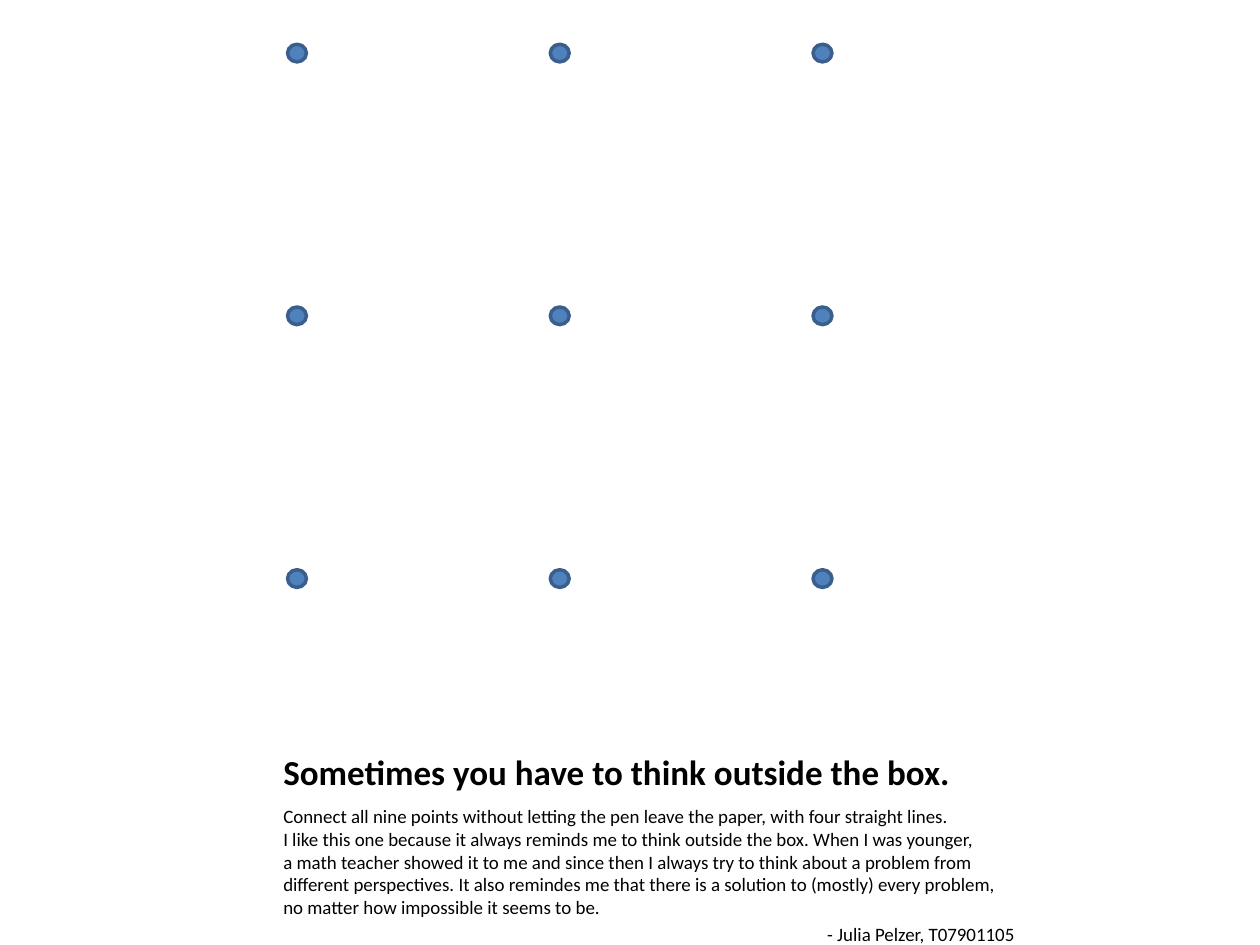
from dataclasses import dataclass

from lxml import etree
from pptx import Presentation
from pptx.dml.color import RGBColor
from pptx.enum.shapes import MSO_SHAPE
from pptx.enum.text import MSO_ANCHOR, PP_ALIGN
from pptx.oxml.ns import qn
from pptx.util import Pt

ELLIPSE = MSO_SHAPE.OVAL
TOP, BOTTOM = MSO_ANCHOR.TOP, MSO_ANCHOR.BOTTOM
LEFT, RIGHT = PP_ALIGN.LEFT, PP_ALIGN.RIGHT


@dataclass(frozen=True)
class Theme:
    font: str = "Calibri"
    ink: RGBColor = RGBColor(0x00, 0x00, 0x00)
    dot_fill: RGBColor = RGBColor(0x4F, 0x81, 0xBD)
    dot_line: RGBColor = RGBColor(0x3A, 0x5F, 0x8C)
    title_size: float = 20
    body_size: float = 10.8


THEME = Theme()
TITLE = "Sometimes you have to think outside the box."
PUZZLE = (
    "Connect all nine points without letting the pen leave the paper, with four straight lines.\n"
    "I like this one because it always reminds me to think outside the box. When I was younger,\n"
    "a math teacher showed it to me and since then I always try to think about a problem from "
    "different perspectives. It also remindes me that there is a solution to (mostly) every "
    "problem, no matter how impossible it seems to be."
)
AUTHOR = "- Julia Pelzer, T07901105"

TEXT_LEFT, TEXT_WIDTH = 154.8, 432
GRID_LEFT, GRID_TOP, GRID_STEP, GRID_COUNT = 164.3, 25.3, 150.15, 3
DOT_WIDTH, DOT_HEIGHT = 10.8, 10.1


def add_text_box(page, top, height, anchor):
    box = page.shapes.add_textbox(Pt(TEXT_LEFT), Pt(top), Pt(TEXT_WIDTH), Pt(height))
    box.text_frame.word_wrap = True
    box.text_frame.vertical_anchor = anchor
    return box


def write_paragraph(para, text, size, bold=False, align=LEFT, space_before=0):
    para.text = text
    para.alignment = align
    para.space_before = Pt(space_before)
    for span in para.runs:
        span.font.name = THEME.font
        span.font.size = Pt(size)
        span.font.bold = bold
        span.font.color.rgb = THEME.ink
    for line_break in para._p.findall(qn("a:br")):
        etree.SubElement(line_break, qn("a:rPr"), sz=str(round(size * 100)))


def add_dot(page, left, top):
    dot = page.shapes.add_shape(ELLIPSE, Pt(left), Pt(top), Pt(DOT_WIDTH), Pt(DOT_HEIGHT))
    dot.shadow.inherit = False
    dot.fill.solid()
    dot.fill.fore_color.rgb = THEME.dot_fill
    dot.line.color.rgb = THEME.dot_line
    dot.line.width = Pt(2)


def add_dot_grid(page):
    for row in range(GRID_COUNT):
        for column in range(GRID_COUNT):
            add_dot(page, GRID_LEFT + column * GRID_STEP, GRID_TOP + row * GRID_STEP)


def main():
    deck = Presentation()
    deck.slide_width, deck.slide_height = Pt(720), Pt(540)
    page = deck.slides.add_slide(deck.slide_layouts[6])

    title = add_text_box(page, 411.8, 44.6, BOTTOM)
    write_paragraph(title.text_frame.paragraphs[0], TITLE, THEME.title_size, bold=True)

    body = add_text_box(page, 456.5, 85.7, TOP).text_frame
    gap = THEME.body_size * 0.2
    write_paragraph(body.paragraphs[0], PUZZLE, THEME.body_size, space_before=gap)
    write_paragraph(body.add_paragraph(), AUTHOR, THEME.body_size, align=RIGHT, space_before=gap)

    add_dot_grid(page)
    deck.save("out.pptx")


if __name__ == "__main__":
    main()
